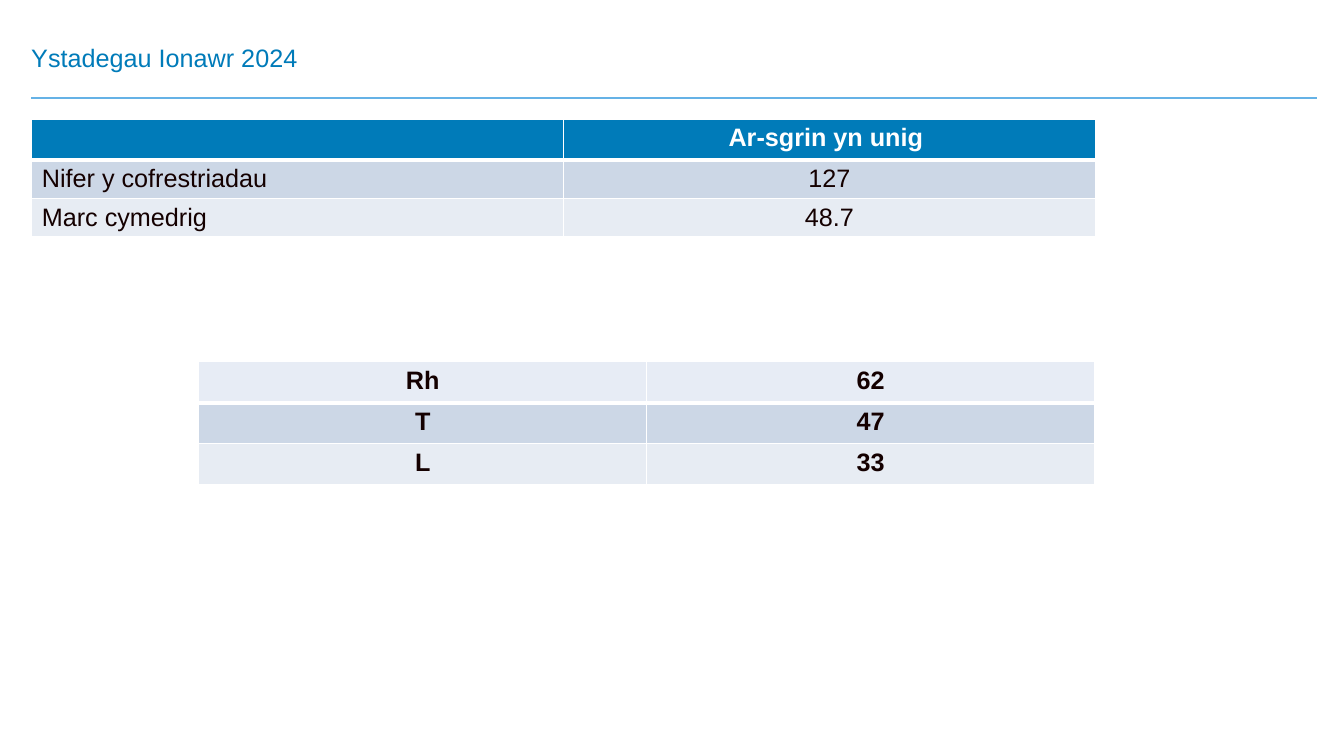
from dataclasses import dataclass
from typing import Any

import pptx
import pptx.dml.color
import pptx.enum.shapes
import pptx.enum.text
import pptx.oxml
import pptx.oxml.ns
import pptx.util

Pt = pptx.util.Pt
Align = pptx.enum.text.PP_ALIGN
Anchor = pptx.enum.text.MSO_ANCHOR


@dataclass(frozen=True)
class Theme:
    font: str = "Arial"
    size: float = 18
    blue: str = "007BB9"
    rule: str = "65B2E6"
    ink: str = "140000"
    white: str = "FFFFFF"
    band: str = "CCD7E6"
    pale: str = "E7ECF3"
    pale_top: str = "E7ECF5"
    thin: float = 1
    thick: float = 3


THEME = Theme()


@dataclass(frozen=True)
class Row:
    texts: tuple[str, ...]
    fill: str
    color: str = THEME.ink
    bold: bool = False


@dataclass(frozen=True)
class Grid:
    left: float
    top: float
    column_width: float
    row_height: float
    rows: tuple[Row, ...]
    alignments: tuple[Any, ...]


GRIDS = (
    Grid(22.7, 85, 379.8, 24, (
        Row(("", "Ar-sgrin yn unig "), THEME.blue, THEME.white, True),
        Row(("Nifer y cofrestriadau", "127"), THEME.band),
        Row(("Marc cymedrig", "48.7"), THEME.pale),
    ), (Align.LEFT, Align.CENTER)),
    Grid(142, 258.5, 320, 29.3, (
        Row(("Rh", "62"), THEME.pale_top, bold=True),
        Row(("T", "47"), THEME.band, bold=True),
        Row(("L", "33"), THEME.pale, bold=True),
    ), (Align.CENTER, Align.CENTER)),
)


def rgb(color: str) -> pptx.dml.color.RGBColor:
    return pptx.dml.color.RGBColor.from_string(color)


def write_text(frame: Any, text: str, *, color: str, bold: bool = False,
               alignment: Any = Align.LEFT, line_spacing: float = 1) -> None:
    paragraph = frame.paragraphs[0]
    paragraph.alignment = alignment
    paragraph.line_spacing = line_spacing
    if not text:
        return
    run = paragraph.add_run()
    run.text = text
    run.font.name = THEME.font
    run.font.size = Pt(THEME.size)
    run.font.bold = bold
    run.font.color.rgb = rgb(color)


def set_borders(cell: Any, top: float, bottom: float) -> None:
    properties = cell._tc.get_or_add_tcPr()
    widths = {"L": THEME.thin, "R": THEME.thin, "T": top, "B": bottom}
    for side, width in widths.items():
        properties.append(pptx.oxml.parse_xml(
            f'<a:ln{side} {pptx.oxml.ns.nsdecls("a")} w="{Pt(width)}">'
            f'<a:solidFill><a:srgbClr val="{THEME.white}"/></a:solidFill></a:ln{side}>'))


def draw_title(slide: Any, text: str) -> None:
    title = slide.shapes.title
    title.left, title.top, title.width, title.height = Pt(22.3), Pt(16.6), Pt(805), Pt(35.3)
    frame = title.text_frame
    frame.margin_left = frame.margin_right = frame.margin_top = frame.margin_bottom = 0
    frame.vertical_anchor = Anchor.BOTTOM
    frame.word_wrap = True
    frame.auto_size = pptx.enum.text.MSO_AUTO_SIZE.NONE
    write_text(frame, text, color=THEME.blue, line_spacing=0.9)


def draw_rule(slide: Any) -> None:
    rule = slide.shapes.add_connector(pptx.enum.shapes.MSO_CONNECTOR.STRAIGHT,
                                      Pt(22.3), Pt(70), Pt(941), Pt(70))
    rule.line.color.rgb = rgb(THEME.rule)
    rule.line.width = Pt(1.75)
    rule._element.spPr.append(
        pptx.oxml.parse_xml(f'<a:effectLst {pptx.oxml.ns.nsdecls("a")}/>'))


def draw_grid(slide: Any, grid: Grid) -> None:
    columns = len(grid.alignments)
    table = slide.shapes.add_table(
        len(grid.rows), columns, Pt(grid.left), Pt(grid.top),
        Pt(grid.column_width * columns), Pt(grid.row_height * len(grid.rows))).table
    table.first_row = table.horz_banding = False
    for row_index, row in enumerate(grid.rows):
        # The line below the first row is the heavy one
        top = THEME.thick if row_index == 1 else THEME.thin
        bottom = THEME.thick if row_index == 0 else THEME.thin
        for column_index, text in enumerate(row.texts):
            cell = table.cell(row_index, column_index)
            set_borders(cell, top, bottom)
            cell.fill.solid()
            cell.fill.fore_color.rgb = rgb(row.fill)
            write_text(cell.text_frame, text, color=row.color, bold=row.bold,
                       alignment=grid.alignments[column_index])


def main() -> None:
    presentation = pptx.Presentation()
    presentation.slide_width, presentation.slide_height = Pt(960), Pt(540)
    slide = presentation.slides.add_slide(presentation.slide_layouts[5])

    # Heading
    draw_rule(slide)
    draw_title(slide, "Ystadegau Ionawr 2024")

    # Entry figures and grade boundaries
    for grid in GRIDS:
        draw_grid(slide, grid)

    presentation.save("out.pptx")


if __name__ == "__main__":
    main()
